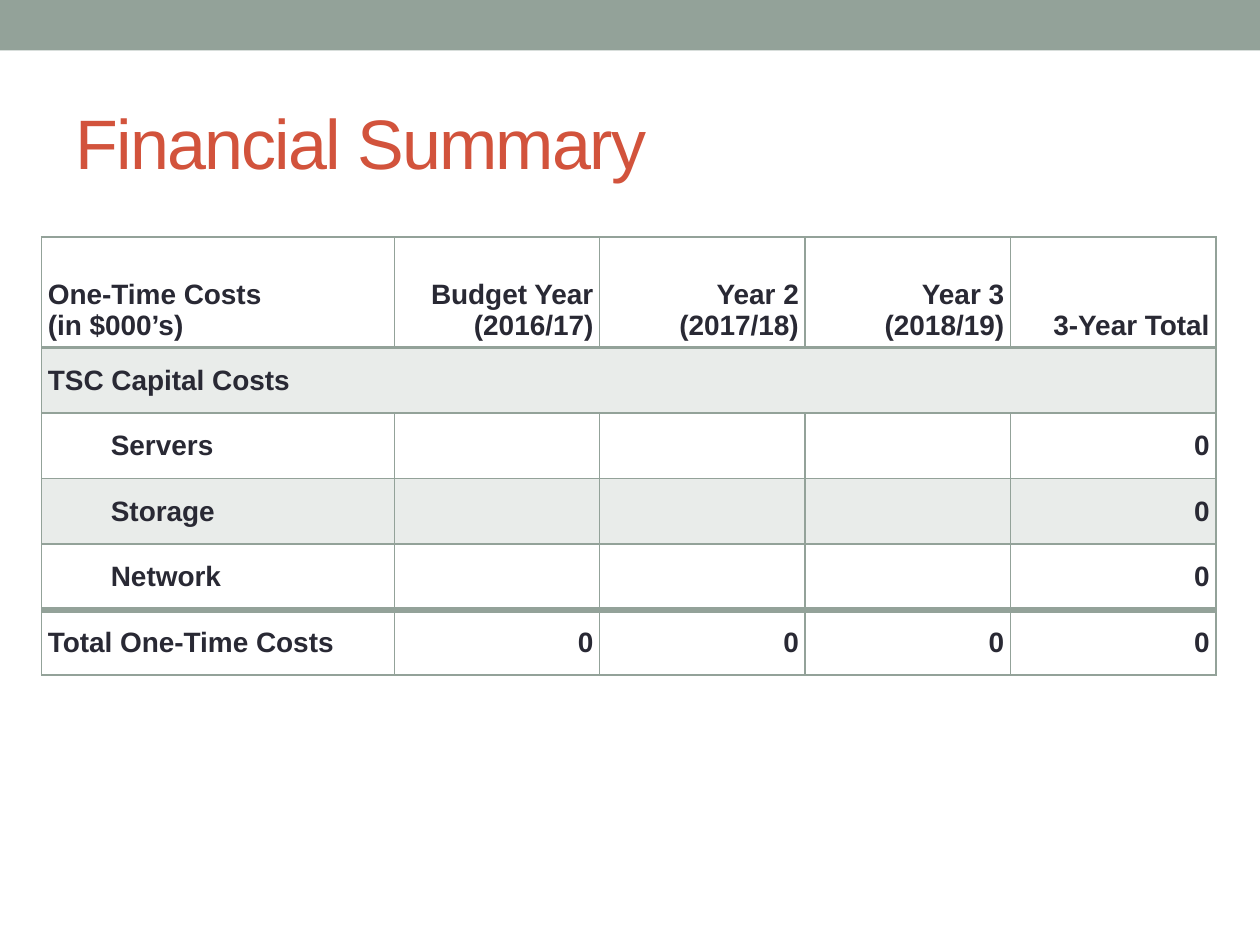
from lxml import etree
from pptx import Presentation
from pptx.dml.color import RGBColor
from pptx.enum.shapes import MSO_SHAPE
from pptx.enum.text import MSO_ANCHOR, PP_ALIGN
from pptx.oxml.ns import qn
from pptx.util import Inches, Pt

SAGE = RGBColor(0x93, 0xA2, 0x99)
RUST = RGBColor(0xD2, 0x53, 0x3C)
INK = RGBColor(0x29, 0x29, 0x34)
FONT = "Arial"
RECTANGLE = MSO_SHAPE.RECTANGLE
LEFT, RIGHT = PP_ALIGN.LEFT, PP_ALIGN.RIGHT
MIDDLE, BOTTOM = MSO_ANCHOR.MIDDLE, MSO_ANCHOR.BOTTOM

COSTS = [
    ["One-Time Costs \v(in $000’s)", "Budget Year\v(2016/17)", "Year 2\v(2017/18)",
     "Year 3\n(2018/19)", "3-Year Total"],
    ["TSC Capital Costs", "", "", "", ""],
    ["\tServers", "", "", "", "0"],
    ["\tStorage", "", "", "", "0"],
    ["\tNetwork", "", "", "", "0"],
    ["Total One-Time Costs", "0", "0", "0", "0"],
]
COLUMN_WIDTHS = [2.8] + [1.63] * 4
ROW_HEIGHTS = [0.88] + [0.52] * 5
RULE_WIDTHS = [1, 2, 1, 1, 1, 4, 1]
SECTION_ROW = 1
SHADED_ROWS = (1, 3)


def style_text(frame, size, color, bold=False, align=LEFT):
    for para in frame.paragraphs:
        para.alignment = align
        para.font.size = Pt(size)
        for span in para.runs:
            span.font.name = FONT
            span.font.size = Pt(size)
            span.font.bold = bold
            span.font.color.rgb = color


def add_band(page):
    band = page.shapes.add_shape(RECTANGLE, 0, 0, Inches(10), Inches(0.4))
    band.shadow.inherit = False
    band.fill.solid()
    band.fill.fore_color.rgb = SAGE
    band.line.fill.background()


def add_title(page, title):
    box = page.shapes.add_textbox(Inches(0.5), Inches(0.58), Inches(9), Inches(1.08))
    frame = box.text_frame
    frame.word_wrap = True
    frame.vertical_anchor = MIDDLE
    frame.text = title
    style_text(frame, 40, RUST)
    frame.paragraphs[0].runs[0].font._element.set("spc", "-100")


def set_borders(cell, top, bottom):
    properties = cell._tc.get_or_add_tcPr()
    for side, width in (("L", 1), ("R", 1), ("T", top), ("B", bottom)):
        line = etree.SubElement(properties, qn(f"a:ln{side}"), w=str(Pt(width)))
        fill = etree.SubElement(line, qn("a:solidFill"))
        etree.SubElement(fill, qn("a:srgbClr"), val=str(SAGE))


def shade(cell):
    cell.fill.solid()
    cell.fill.fore_color.rgb = SAGE
    color = cell._tc.tcPr.find(qn("a:solidFill")).find(qn("a:srgbClr"))
    etree.SubElement(color, qn("a:alpha"), val="20000")


def format_cell(cell, text, row, column):
    cell.text = text
    cell.margin_left = cell.margin_right = Inches(0.05)
    cell.margin_top = cell.margin_bottom = Inches(0.05)
    cell.vertical_anchor = MIDDLE if row else BOTTOM
    style_text(cell.text_frame, 16, INK, True, RIGHT if column else LEFT)
    set_borders(cell, RULE_WIDTHS[row], RULE_WIDTHS[row + 1])
    if row in SHADED_ROWS:
        shade(cell)
    else:
        cell.fill.background()


def add_cost_table(page):
    table = page.shapes.add_table(
        len(COSTS), len(COLUMN_WIDTHS), Inches(0.33), Inches(1.88),
        Inches(sum(COLUMN_WIDTHS)), Inches(sum(ROW_HEIGHTS))).table
    table.first_row = False
    table.horz_banding = False
    for column, width in zip(table.columns, COLUMN_WIDTHS):
        column.width = Inches(width)
    for row, height in zip(table.rows, ROW_HEIGHTS):
        row.height = Inches(height)
    for row, texts in enumerate(COSTS):
        for column, text in enumerate(texts):
            format_cell(table.cell(row, column), text, row, column)
    last_column = len(COLUMN_WIDTHS) - 1
    table.cell(SECTION_ROW, 0).merge(table.cell(SECTION_ROW, last_column))


def main():
    deck = Presentation()
    deck.slide_width, deck.slide_height = Inches(10), Inches(7.5)
    page = deck.slides.add_slide(deck.slide_layouts[6])
    add_band(page)
    add_title(page, "Financial Summary")
    add_cost_table(page)
    deck.save("out.pptx")


if __name__ == "__main__":
    main()
